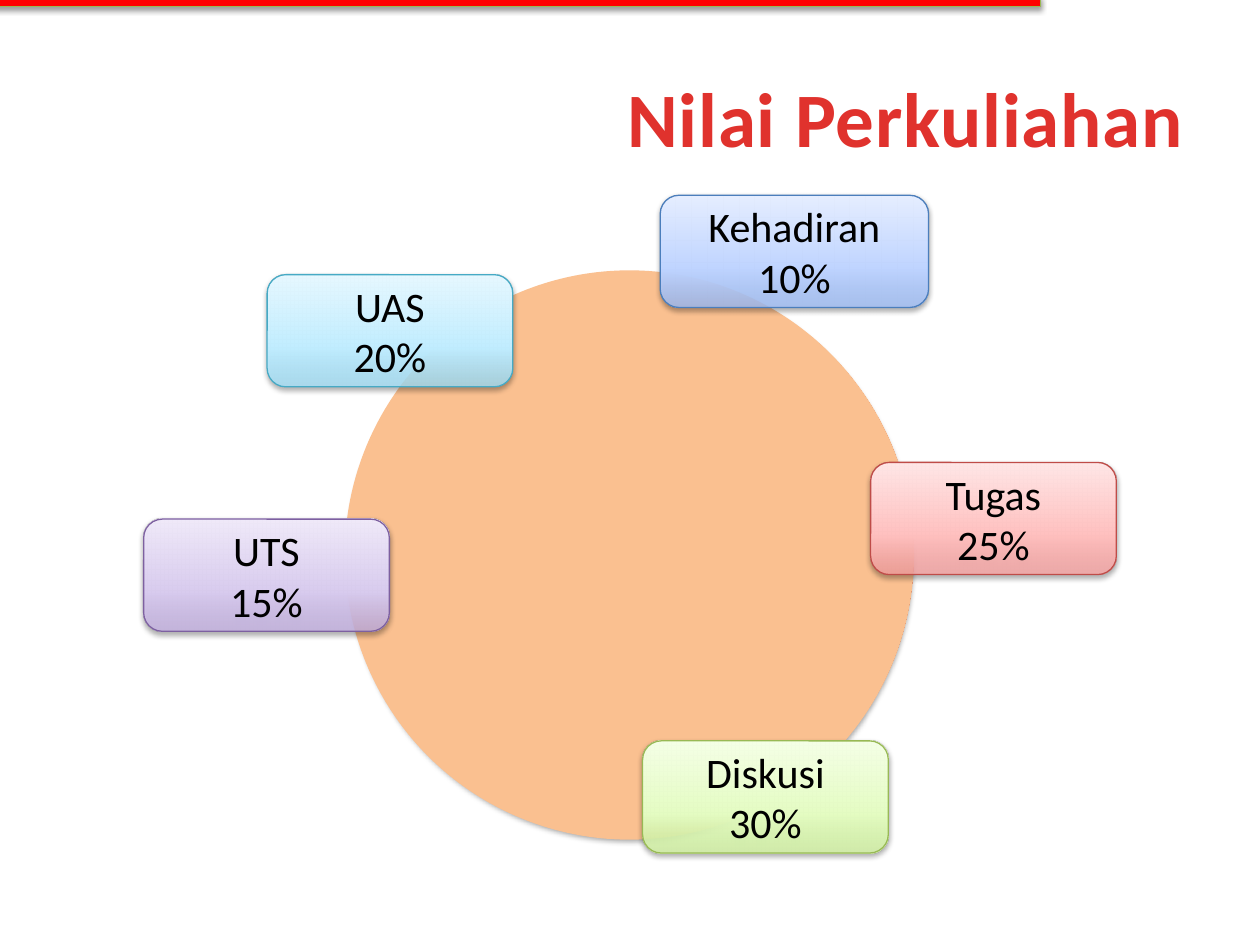
from lxml import etree
from pptx import Presentation
from pptx import util as u
from pptx.dml.color import RGBColor
from pptx.enum import shapes, text
from pptx.oxml import parse_xml

NS = "http://schemas.openxmlformats.org/drawingml/2006/main"
IN = u.Inches


def blend(stops, angle):
    """Gradient fill from (position %, colour, opacity %) stops."""
    marks = "".join(
        f'<a:gs pos="{pos * 1000}"><a:srgbClr val="{tone}">'
        f'<a:alpha val="{alpha * 1000}"/></a:srgbClr></a:gs>'
        for pos, tone, alpha in stops)
    return parse_xml(
        f'<a:gradFill xmlns:a="{NS}" rotWithShape="1"><a:gsLst>{marks}</a:gsLst>'
        f'<a:lin ang="{angle * 60000}" scaled="0"/></a:gradFill>')


def draw(kind, box, fill, line=None, width=0.75, shade=None):
    """Shape with a solid colour or gradient stops, and shadow (opacity %, distance)."""
    shape = slide.shapes.add_shape(kind, *[IN(n) for n in box])
    if isinstance(fill, str):
        shape.fill.solid()
        shape.fill.fore_color.rgb = RGBColor.from_string(fill)
    else:
        shape._element.spPr.insert(2, blend(fill, 270))
    if line:
        shape.line.color.rgb = RGBColor.from_string(line)
        shape.line.width = u.Pt(width)
    else:
        shape.line.fill.background()
    shape.shadow.inherit = False
    if shade:
        alpha, dist = shade
        effect = shape._element.spPr.find(f"{{{NS}}}effectLst")
        cast = etree.SubElement(effect, f"{{{NS}}}outerShdw", blurRad=str(u.Pt(3.1)),
                                dist=str(u.Pt(dist)), dir="5400000", rotWithShape="0")
        tone = etree.SubElement(cast, f"{{{NS}}}srgbClr", val="000000")
        etree.SubElement(tone, f"{{{NS}}}alpha", val=str(alpha * 1000))
    return shape


prs = Presentation()
prs.slide_width, prs.slide_height = IN(10), IN(7.5)
slide = prs.slides.add_slide(prs.slide_layouts[5])
kinds = shapes.MSO_SHAPE

# Title
title = slide.shapes.title
title.left, title.top, title.width, title.height = IN(0.5), IN(0.3), IN(9), IN(1.25)
title.text_frame.vertical_anchor = text.MSO_ANCHOR.MIDDLE
para = title.text_frame.paragraphs[0]
para.alignment = text.PP_ALIGN.RIGHT
run = para.add_run()
run.text = "Nilai Perkuliahan"
run.font.name, run.font.size, run.font.bold = "Calibri", u.Pt(44), True
props = run.font._element
props.set("spc", "50")
props.insert(0, blend([(25, "E0322D", 100), (100, "A2201C", 100)], 90))

# Pie slices, which cast the shadow around the disc
slices = [
    (2.18, 118.7, 162.05, "2A88A2", "37B1D2", "34B4D6"),
    (2.16, 86.99, 118.97, "5F4480", "7B58A6", "7C57A8"),
    (2.16, 20.87, 87.09, "779737", "9BC348", "9DC746"),
    (2.16, 183.68, 20.78, "9C2F2D", "CB3E3A", "CE3B37"),
    (2.16, 162.01, 183.82, "2F5F99", "3D7CC7", "3A7CCB"),
]
for top, start, end, *tones in slices:
    stops = [(pos, tone, 100) for pos, tone in zip((0, 80, 100), tones)]
    pie = draw(kinds.PIE, (2.76, top, 4.49, 4.49), stops, shade=(35, 1.8))
    pie.adjustments[0], pie.adjustments[1] = start, end

# Disc
draw(kinds.OVAL, (2.75, 2.16, 4.49, 4.49), "FAC090", "FAC090", 2)

# Grade labels
labels = [
    ("Kehadiran", "10%", 5.24, 1.55, 2.13, "4B7EBC", "A4C4FF", "BFD4FF", "E6EEFF"),
    ("Tugas", "25%", 6.91, 3.67, 1.95, "BF4C48", "FFA6A5", "FFC0BF", "FFE7E7"),
    ("Diskusi", "30%", 5.1, 5.88, 1.95, "98B955", "DAFDA7", "E4FCC2", "F5FFE7"),
    ("UTS", "15%", 1.14, 4.12, 1.95, "7D60A0", "C9B5E8", "D8CBEE", "F0EAF9"),
    ("UAS", "20%", 2.12, 2.18, 1.95, "46AAC5", "A7E6FF", "C1EDFF", "E7F8FF"),
]
for name, share, left, top, wide, edge, *tones in labels:
    stops = list(zip((0, 35, 100), tones, (75, 100, 100)))
    label = draw(kinds.ROUNDED_RECTANGLE, (left, top, wide, 0.89), stops, edge,
                 shade=(38, 1.6))
    frame = label.text_frame
    frame.word_wrap = True
    frame.auto_size = text.MSO_AUTO_SIZE.SHAPE_TO_FIT_TEXT
    frame.vertical_anchor = text.MSO_ANCHOR.MIDDLE
    frame.margin_left = frame.margin_right = IN(0.04)
    frame.margin_top = frame.margin_bottom = 0
    frame.text = f"{name}\n{share}"
    for para in frame.paragraphs:
        para.alignment = text.PP_ALIGN.CENTER
        para.font.name, para.font.size = "Calibri", u.Pt(24)
        para.font.color.rgb = RGBColor.from_string("000000")

# Top bar
draw(kinds.RECTANGLE, (-0.04, -0.03, 8.3, 0.08), "FF0000", "98B955", shade=(38, 1.6))

prs.save("out.pptx")
